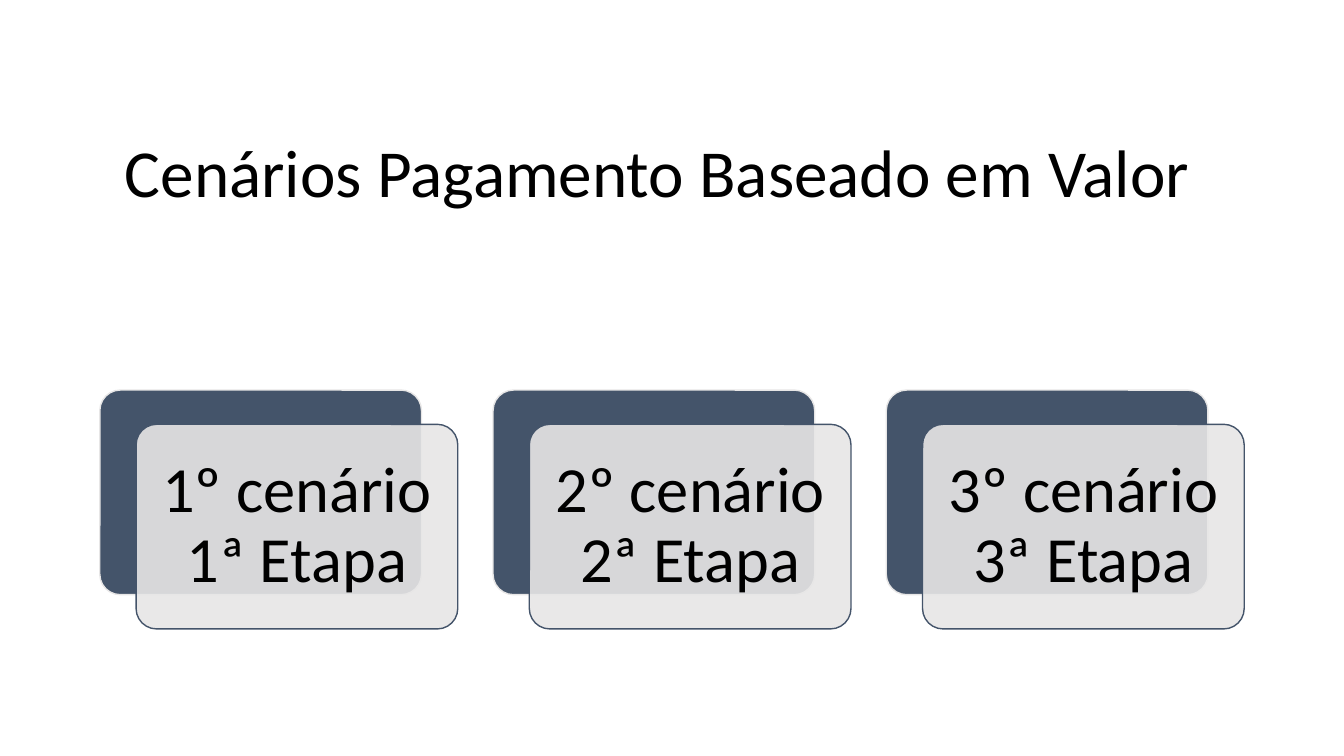
from dataclasses import dataclass

from lxml.etree import SubElement
from pptx import Presentation
from pptx.dml.color import RGBColor
from pptx.enum.shapes import MSO_SHAPE
from pptx.enum.text import MSO_ANCHOR, PP_ALIGN
from pptx.oxml.ns import qn
from pptx.shapes.autoshape import Shape
from pptx.slide import Slide
from pptx.text.text import TextFrame
from pptx.util import Inches, Pt

FONT = "Calibri"
BLACK, NAVY, GRAY = "000000", "44546A", "E7E6E6"
CARD_W, CARD_H = 3.19, 2.03
FIRST_LEFT, TOP, PITCH = 0.99, 3.87, 3.9
OFFSET_X, OFFSET_Y = 0.36, 0.34


@dataclass
class Scenario:
    left: float
    text: str


def color(value: str) -> RGBColor:
    return RGBColor.from_string(value)


def write(tf: TextFrame, text: str, size: int, align: PP_ALIGN) -> None:
    tf.word_wrap = True
    tf.vertical_anchor = MSO_ANCHOR.MIDDLE
    tf.text = text
    p = tf.paragraphs[0]
    p.alignment = align
    p.line_spacing = 0.9
    r = p.runs[0]
    r.font.name = FONT
    r.font.size = Pt(size)
    r.font.color.rgb = color(BLACK)


def add_card(s: Slide, left: float, top: float, fill: str, line: str) -> Shape:
    sp = s.shapes.add_shape(MSO_SHAPE.ROUNDED_RECTANGLE, Inches(left), Inches(top),
                            Inches(CARD_W), Inches(CARD_H))
    sp.adjustments[0] = 0.1
    sp.shadow.inherit = False
    sp.fill.solid()
    sp.fill.fore_color.rgb = color(fill)
    sp.line.color.rgb = color(line)
    sp.line.width = Pt(1)
    return sp


def set_opacity(sp: Shape, percent: int) -> None:
    rgb = sp._element.spPr.find(qn("a:solidFill")).find(qn("a:srgbClr"))
    SubElement(rgb, qn("a:alpha")).set("val", str(percent * 1000))


def add_scenario(s: Slide, scenario: Scenario) -> None:
    add_card(s, scenario.left, TOP, NAVY, GRAY)
    front = add_card(s, scenario.left + OFFSET_X, TOP + OFFSET_Y, GRAY, NAVY)
    set_opacity(front, 90)
    tf = front.text_frame
    tf.margin_left = tf.margin_right = Inches(0.19)
    tf.margin_top = tf.margin_bottom = Inches(0.19)
    write(tf, scenario.text, 46, PP_ALIGN.CENTER)


def main() -> None:
    prs = Presentation()
    prs.slide_width, prs.slide_height = Inches(13.33), Inches(7.5)
    s = prs.slides.add_slide(prs.slide_layouts[6])

    # Title
    title = s.shapes.add_textbox(Inches(1.14), Inches(0.89), Inches(11.13), Inches(1.7))
    write(title.text_frame, "Cenários Pagamento Baseado em Valor", 48, PP_ALIGN.LEFT)

    # Scenario cards
    for i in range(3):
        text = f"{i + 1}º cenário {i + 1}ª Etapa"
        add_scenario(s, Scenario(FIRST_LEFT + i * PITCH, text))

    prs.save("out.pptx")


if __name__ == "__main__":
    main()
